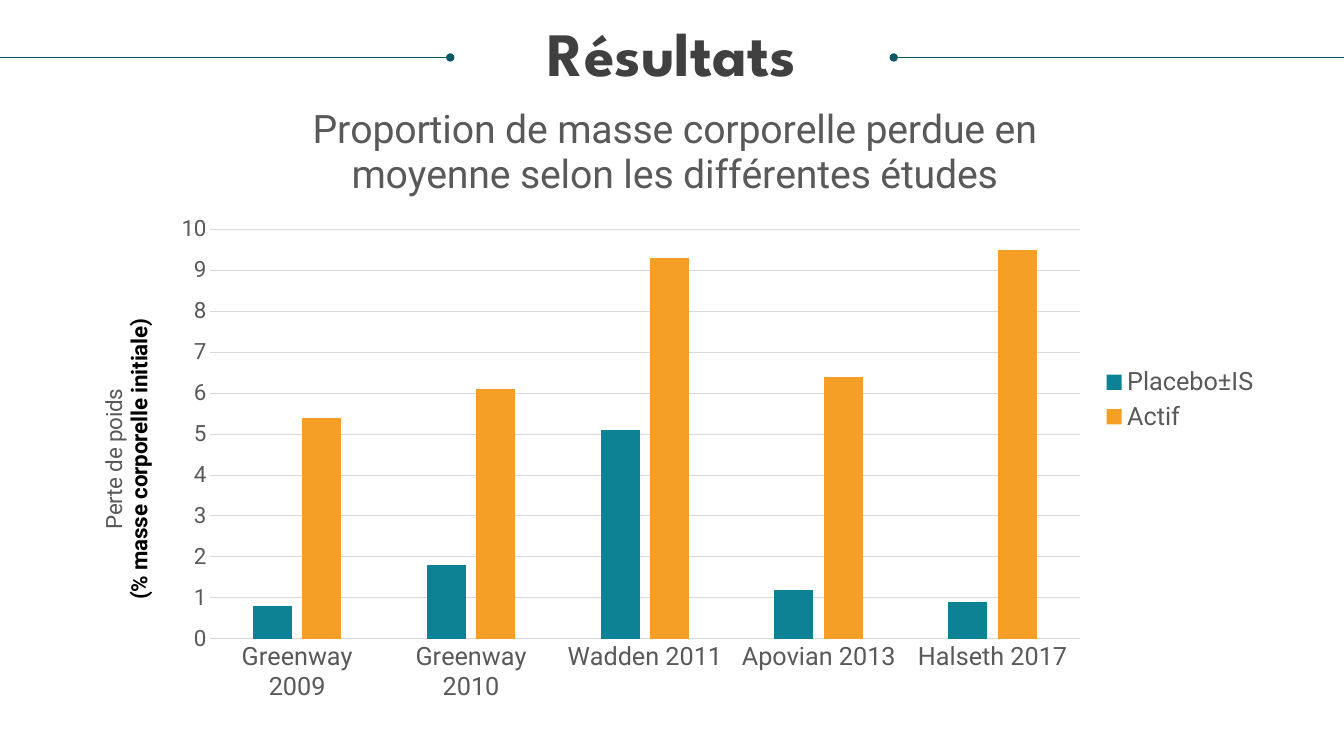
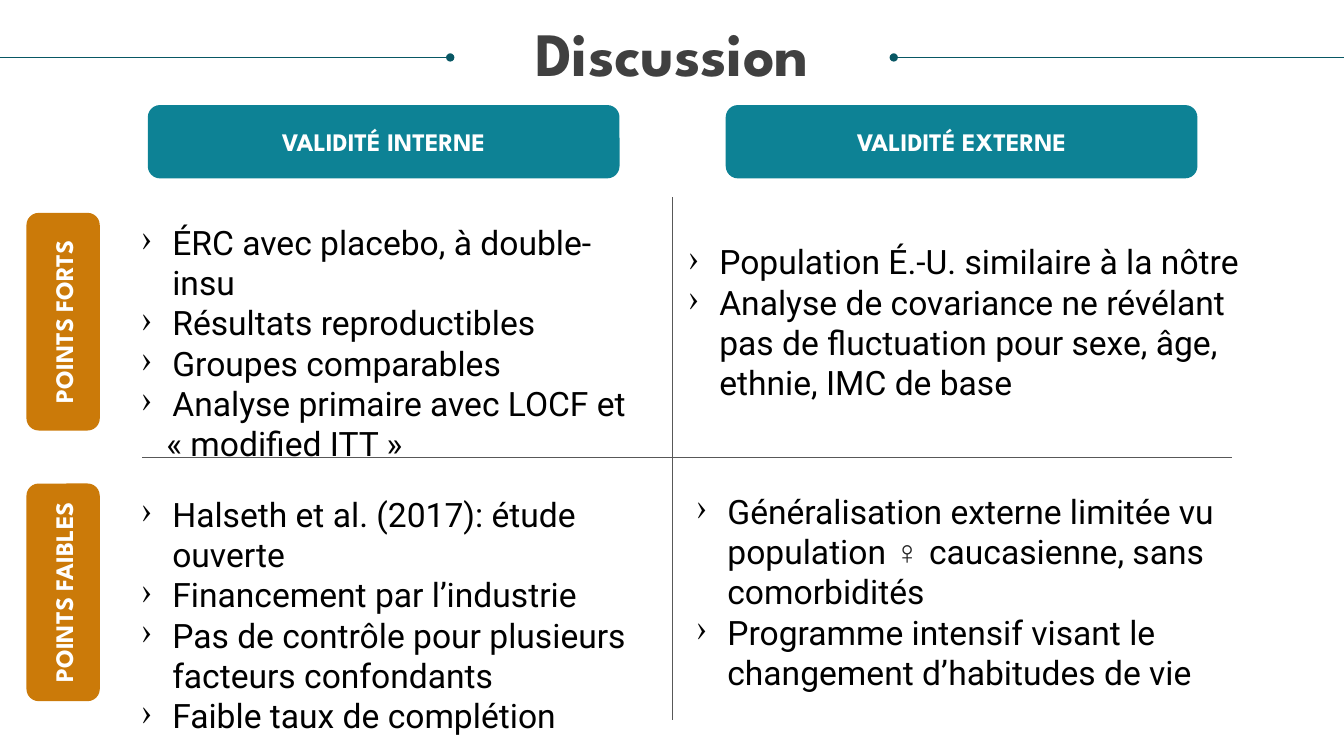
from lxml import etree
from pptx import Presentation
from pptx.chart.data import CategoryChartData
from pptx.dml.color import RGBColor
from pptx.enum.chart import XL_CHART_TYPE as ChartType, XL_LEGEND_POSITION as LegendPos
from pptx.enum.chart import XL_TICK_MARK as TickMark
from pptx.enum.shapes import MSO_CONNECTOR as Connector, MSO_SHAPE as Shape
from pptx.enum.text import MSO_ANCHOR as Anchor, PP_ALIGN as Align
from pptx.oxml import parse_xml
from pptx.oxml.ns import nsdecls, qn
from pptx.util import Inches, Pt

W, H = 13.33, 7.5
HEAD, BODY = "League Spartan", "Roboto"
C = {"rule": "085764", "teal": "0D8295", "orange": "F59F26", "ochre": "CB7A09",
     "title": "404040", "grey": "595959", "grid": "D9D9D9", "divider": "585858",
     "symbol": "222222", "black": "000000", "white": "FFFFFF"}
COLOR = {name: RGBColor.from_string(value) for name, value in C.items()}

TITLE = {"name": HEAD, "size": Pt(44), "bold": True, "color": "title"}
LABEL = {"name": HEAD, "size": Pt(18), "bold": True, "color": "white"}
BULLET = {"name": BODY, "size": Pt(24), "color": "black"}
SYMBOL = {"name": "Arial", "size": Pt(24), "color": "symbol"}
CHART_TITLE = {"name": BODY, "size": Pt(28), "bold": False, "color": "grey"}
AXIS = {"name": BODY, "size": Pt(16), "bold": False, "color": "grey"}
AXIS_BOLD = {"name": BODY, "size": Pt(16), "bold": True, "color": "black"}
LARGE = {"name": BODY, "size": Pt(18), "bold": False, "color": "grey"}


def area(x, y, w, h):
    """Turn percentages of the slide's width and height into lengths."""
    return [Inches(share * side / 100) for share, side in zip((x, y, w, h), (W, H, W, H))]


def style(font, fmt):
    for key, value in fmt.items():
        if key == "color":
            font.color.rgb = COLOR[value]
        else:
            setattr(font, key, value)


prs = Presentation()
prs.slide_width, prs.slide_height = Inches(W), Inches(H)

# Title and rules: from x, y to x, y, colour, dot at the end
title_rules = [(0, 7.6, 33.5, 7.6, "rule", True), (100, 7.6, 66.5, 7.6, "rule", True)]
dividers = [(10.6, 60.5, 91.7, 60.5, "divider", False), (50, 26.1, 50, 95.2, "divider", False)]
slides = []
for title, extra_rules in (("Résultats", []), ("Discussion", dividers)):
    s = prs.slides.add_slide(prs.slide_layouts[5])
    slides.append(s)
    sp = s.shapes.title
    sp.left, sp.top, sp.width, sp.height = area(1.9, 3.1, 96.2, 8.9)
    tf = sp.text_frame
    tf.margin_left = tf.margin_right = tf.margin_top = tf.margin_bottom = 0
    tf.vertical_anchor = Anchor.TOP
    p = tf.paragraphs[0]
    p.alignment, p.line_spacing = Align.CENTER, 0.9
    r = p.add_run()
    r.text = title
    style(r.font, TITLE)
    for x1, y1, x2, y2, color, dot in title_rules + extra_rules:
        line = s.shapes.add_connector(Connector.STRAIGHT, *area(x1, y1, x2, y2))
        line.line.color.rgb = COLOR[color]
        line.line.width = Pt(0.5)
        if dot:
            etree.SubElement(line.line._get_or_add_ln(), qn("a:tailEnd"), type="oval")
        etree.SubElement(line._element.spPr, qn("a:effectLst"))
results, discussion = slides

# Results: column chart
data = CategoryChartData()
data.categories = ["Greenway 2009", "Greenway 2010", "Wadden 2011", "Apovian 2013", "Halseth 2017"]
data.add_series("Placebo±IS", (0.8, 1.8, 5.1, 1.2, 0.9))
data.add_series("Actif", (5.4, 6.1, 9.3, 6.4, 9.5))
chart = results.shapes.add_chart(ChartType.COLUMN_CLUSTERED, *area(5.9, 11.2, 88.6, 83.3), data).chart
style(chart.font, {"name": BODY, "size": Pt(10), "color": "black"})

plot = chart.plots[0]
plot.gap_width, plot.overlap, plot.vary_by_categories = 219, -27, False
for series, color in zip(plot.series, ("teal", "orange")):
    series.format.fill.solid()
    series.format.fill.fore_color.rgb = COLOR[color]

cats, vals = chart.category_axis, chart.value_axis
for axis, fmt in ((cats, LARGE), (vals, AXIS)):
    axis.major_tick_mark = axis.minor_tick_mark = TickMark.NONE
    style(axis.tick_labels.font, fmt)
vals.minimum_scale, vals.maximum_scale, vals.major_unit = 0, 10, 1
vals.format.line.fill.background()
for thin in (cats.format.line, vals.major_gridlines.format.line):
    thin.color.rgb = COLOR["grid"]
    thin.width = Pt(0.75)

chart.has_title = chart.has_legend = True
chart.legend.position, chart.legend.include_in_layout = LegendPos.RIGHT, False
style(chart.legend.font, LARGE)
headings = [
    (chart.chart_title, [("Proportion de masse corporelle perdue en", CHART_TITLE),
                         ("moyenne selon les différentes études", CHART_TITLE)]),
    (vals.axis_title, [("Perte de poids", AXIS), ("(% masse corporelle initiale)", AXIS_BOLD)]),
]
for heading, lines in headings:
    tf = heading.text_frame
    for i, (text, fmt) in enumerate(lines):
        p = tf.add_paragraph() if i else tf.paragraphs[0]
        r = p.add_run()
        r.text = text
        style(r.font, fmt)

plot_area = chart.element.find(".//" + qn("c:plotArea"))
for old in plot_area.findall(qn("c:layout")):
    plot_area.remove(old)
plot_area.insert(0, parse_xml(
    f'<c:layout {nsdecls("c")}><c:manualLayout><c:layoutTarget val="inner"/>'
    '<c:xMode val="edge"/><c:yMode val="edge"/><c:x val="0.11"/><c:y val="0.23"/>'
    '<c:w val="0.73"/><c:h val="0.65"/></c:manualLayout></c:layout>'))

# Discussion: column and row labels
labels = [("VALIDITÉ INTERNE", (11, 13.9, 35.1, 9.7), "teal", 0),
          ("VALIDITÉ EXTERNE", (54, 13.9, 35.1, 9.7), "teal", 0),
          ("POINTS FORTS", (-3.4, 37.7, 16.2, 9.7), "ochre", 270),
          ("POINTS FAIBLES", (-3.4, 73.5, 16.2, 9.7), "ochre", 270)]
for text, place, color, turn in labels:
    sp = discussion.shapes.add_shape(Shape.ROUNDED_RECTANGLE, *area(*place))
    sp.shadow.inherit = False
    sp.rotation = turn
    sp.fill.solid()
    sp.fill.fore_color.rgb = COLOR[color]
    sp.line.fill.background()
    sp.text_frame.vertical_anchor = Anchor.MIDDLE
    p = sp.text_frame.paragraphs[0]
    p.alignment = Align.CENTER
    r = p.add_run()
    r.text = text
    style(r.font, LABEL)

# Discussion: the four quadrants
quadrants = [
    ((10.5, 29.3, 37.6, 32.3), ["ÉRC avec placebo, à double-insu", "Résultats reproductibles",
                                "Groupes comparables", "Analyse primaire avec LOCF et",
                                "« modified ITT »"]),
    ((51.2, 31.9, 42, 21.6), ["Population É.-U. similaire à la nôtre",
                              "Analyse de covariance ne révélant pas de fluctuation pour sexe, "
                              "âge, ethnie, IMC de base"]),
    ((10.5, 65.3, 39.5, 27), ["Halseth et al. (2017): étude ouverte", "Financement par l’industrie",
                              "Pas de contrôle pour plusieurs facteurs confondants",
                              "Faible taux de complétion"]),
    ((51.8, 64.9, 39.6, 27), ["Généralisation externe limitée vu population ♀ caucasienne, "
                              "sans comorbidités",
                              "Programme intensif visant le changement d’habitudes de vie"]),
]
for place, points in quadrants:
    tf = discussion.shapes.add_textbox(*area(*place)).text_frame
    tf.word_wrap = True
    tf.margin_left = tf.margin_right = tf.margin_top = tf.margin_bottom = 0
    for i, point in enumerate(points):
        p = tf.add_paragraph() if i else tf.paragraphs[0]
        pPr = p._p.get_or_add_pPr()
        if point.startswith("«"):  # continues the point above, without a bullet
            pPr.set("marL", str(Inches(0.25)))
        else:
            pPr.set("marL", str(Inches(0.31)))
            pPr.set("indent", str(-Inches(0.31)))
            etree.SubElement(pPr, qn("a:buChar"), char="›")
        before, symbol, after = point.partition("♀ ")
        for text, fmt in ((before, BULLET), (symbol, SYMBOL), (after, BULLET)):
            if text:
                r = p.add_run()
                r.text = text
                style(r.font, fmt)

prs.save("out.pptx")
